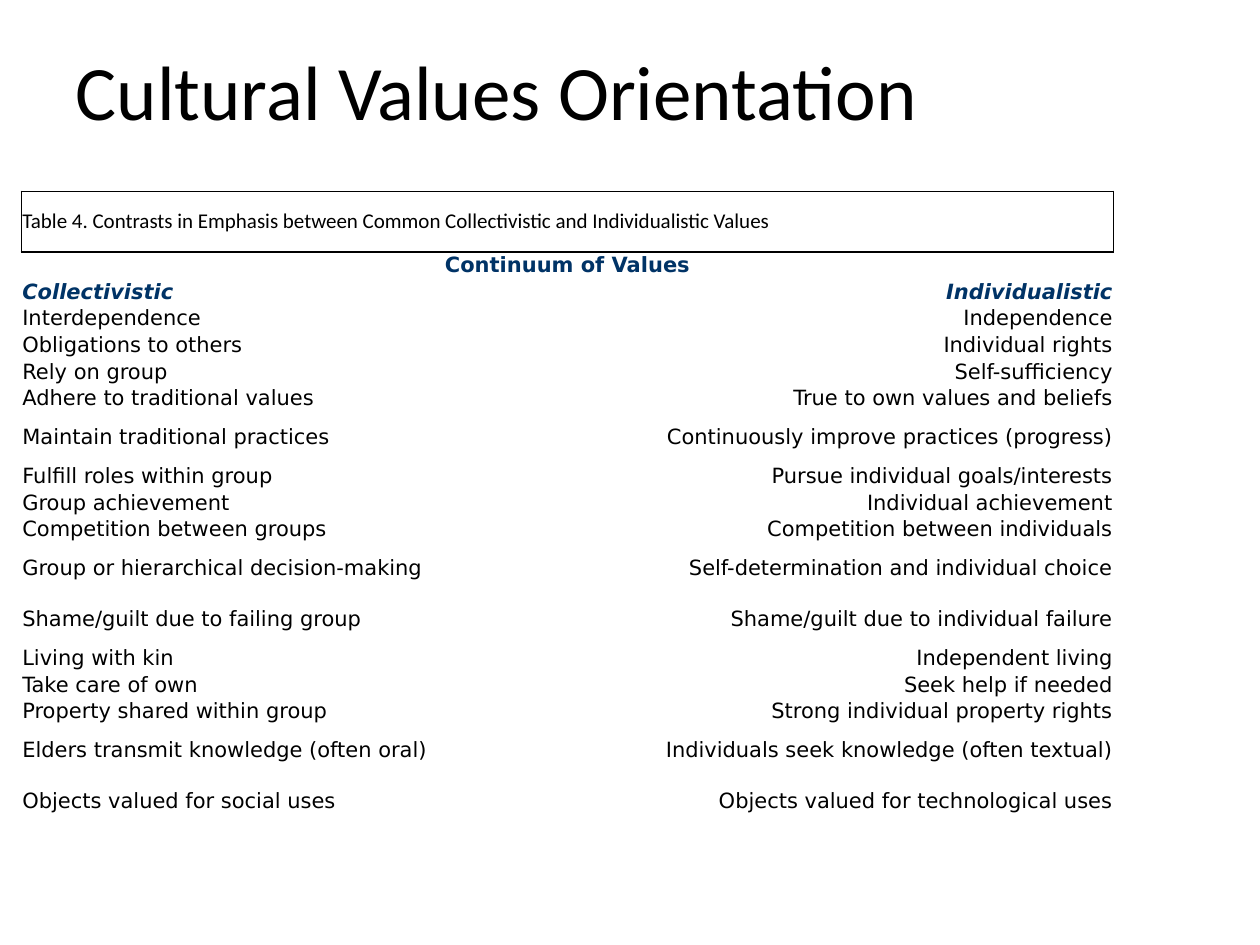
import pptx
import pptx.dml.color
import pptx.enum.text
import pptx.oxml
import pptx.oxml.ns
import pptx.util
from dataclasses import dataclass

Cm = pptx.util.Cm
Align = pptx.enum.text.PP_ALIGN
Anchor = pptx.enum.text.MSO_ANCHOR


@dataclass(frozen=True)
class Theme:
    ink: str = "000000"
    heading: str = "003366"
    title_font: str = "Calibri"
    table_font: str = "DejaVu Sans"
    title_size: int = 44
    table_size: int = 12
    border_width: float = 1
    plain_table_style: str = "{2D5ABB26-0587-4C30-8999-92F81FD0307C}"


TITLE = "Cultural Values Orientation"
CAPTION = ("Table 4. Contrasts in Emphasis between Common Collectivistic "
           "and Individualistic Values")
CONTINUUM = "Continuum of Values"
ENDS = ("Collectivistic", "Individualistic")
CONTRASTS = [
    ("Interdependence", "Independence"),
    ("Obligations to others", "Individual rights"),
    ("Rely on group", "Self-sufficiency"),
    ("Adhere to traditional values", "True to own values and beliefs"),
    ("Maintain traditional practices", "Continuously improve practices (progress)"),
    ("Fulfill roles within group", "Pursue individual goals/interests"),
    ("Group achievement", "Individual achievement"),
    ("Competition between groups", "Competition between individuals"),
    ("Group or hierarchical decision-making", "Self-determination and individual choice"),
    ("Shame/guilt due to failing group", "Shame/guilt due to individual failure"),
    ("Living with kin", "Independent living"),
    ("Take care of own", "Seek help if needed"),
    ("Property shared within group", "Strong individual property rights"),
    ("Elders transmit knowledge (often oral)", "Individuals seek knowledge (often textual)"),
    ("Objects valued for social uses", "Objects valued for technological uses"),
]
TALL_CONTRASTS = {4, 8, 9, 13, 14}
CAPTION_HEIGHT, ROW_HEIGHT, TALL_HEIGHT = 1.22, 0.53, 1.03


def set_all(target, values):
    for name, value in values.items():
        setattr(target, name, value)


class SlideBuilder:
    def __init__(self, deck, theme):
        self.theme = theme
        self.slide = deck.slides.add_slide(deck.slide_layouts.get_by_name("Title Only"))

    def add_text(self, para, text, align=Align.LEFT, color=None, **font):
        para.alignment = align
        span = para.add_run()
        span.text = text
        set_all(span.font, font)
        span.font.color.rgb = pptx.dml.color.RGBColor.from_string(color or self.theme.ink)

    def title(self, text, left, top, width, height):
        box = self.slide.shapes.title
        set_all(box, dict(left=Cm(left), top=Cm(top), width=Cm(width), height=Cm(height)))
        set_all(box.text_frame, dict(vertical_anchor=Anchor.MIDDLE, word_wrap=True,
                                     auto_size=pptx.enum.text.MSO_AUTO_SIZE.NONE))
        para = box.text_frame.paragraphs[0]
        para.line_spacing = 0.9
        self.add_text(para, text, name=self.theme.title_font,
                      size=pptx.util.Pt(self.theme.title_size))

    def table(self, left, top, width, heights):
        frame = self.slide.shapes.add_table(len(heights), 2, Cm(left), Cm(top),
                                            Cm(width), Cm(sum(heights)))
        table = frame.table
        set_all(table, dict(first_row=False, horz_banding=False))
        style = table._tbl.tblPr.find(pptx.oxml.ns.qn("a:tableStyleId"))
        style.text = self.theme.plain_table_style
        for row, height in zip(table.rows, heights):
            row.height = Cm(height)
        for cell in table.iter_cells():
            cell.fill.background()
        return table

    def cell(self, cell, text, **style):
        inset = Cm(0.02)
        set_all(cell, dict(margin_left=inset, margin_right=inset, margin_top=inset,
                           margin_bottom=inset, vertical_anchor=Anchor.MIDDLE))
        font = dict(name=self.theme.table_font, size=pptx.util.Pt(self.theme.table_size))
        self.add_text(cell.text_frame.paragraphs[0], text, **{**font, **style})

    def border(self, cell, sides):
        """Draw the sides named by letters, given in the schema order L, R, T, B."""
        properties = cell._tc.get_or_add_tcPr()
        width = pptx.util.Pt(self.theme.border_width)
        for index, side in enumerate(sides):
            properties.insert(index, pptx.oxml.parse_xml(
                f'<a:ln{side} {pptx.oxml.ns.nsdecls("a")} w="{width}"><a:solidFill>'
                f'<a:srgbClr val="{self.theme.ink}"/></a:solidFill></a:ln{side}>'))

    def contrast_row(self, table, row, pair, **style):
        for column, (text, align) in enumerate(zip(pair, (Align.LEFT, Align.RIGHT))):
            self.cell(table.cell(row, column), text, align=align, **style)


def main():
    deck = pptx.Presentation()
    set_all(deck, dict(slide_width=Cm(25.4), slide_height=Cm(19.05)))
    theme = Theme()
    page = SlideBuilder(deck, theme)
    page.title(TITLE, 1.27, 0.64, 21.16, 2.59)

    heights = [CAPTION_HEIGHT, ROW_HEIGHT, ROW_HEIGHT]
    heights += [TALL_HEIGHT if index in TALL_CONTRASTS else ROW_HEIGHT
                for index in range(len(CONTRASTS))]
    table = page.table(0.43, 3.86, 22.02, heights)
    for row in range(2):
        table.cell(row, 0).merge(table.cell(row, 1))
    page.cell(table.cell(0, 0), CAPTION, name=theme.title_font)
    page.border(table.cell(0, 0), "LRTB")
    page.border(table.cell(0, 1), "RTB")

    heading = dict(color=theme.heading, bold=True)
    page.cell(table.cell(1, 0), CONTINUUM, align=Align.CENTER, **heading)
    page.contrast_row(table, 2, ENDS, italic=True, **heading)
    for row, pair in enumerate(CONTRASTS, start=3):
        page.contrast_row(table, row, pair)
    deck.save("out.pptx")


if __name__ == "__main__":
    main()
